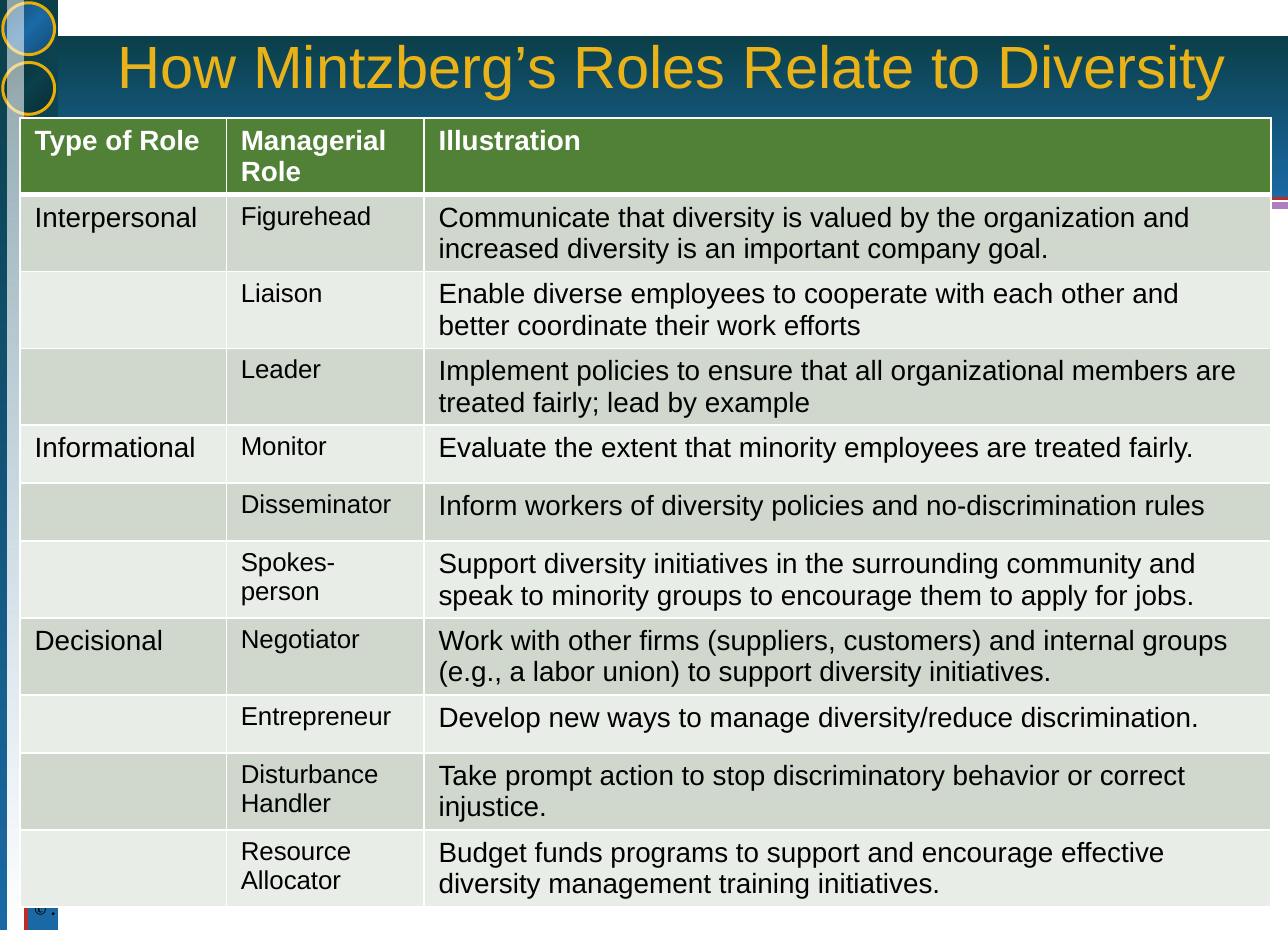
from dataclasses import dataclass

from lxml import etree
from pptx import Presentation
from pptx.dml.color import RGBColor
from pptx.enum.shapes import MSO_CONNECTOR, MSO_SHAPE
from pptx.enum.text import MSO_ANCHOR, MSO_AUTO_SIZE, PP_ALIGN
from pptx.oxml.ns import qn
from pptx.util import Cm, Pt

RECTANGLE, OVAL = MSO_SHAPE.RECTANGLE, MSO_SHAPE.OVAL
STRAIGHT = MSO_CONNECTOR.STRAIGHT
MIDDLE, BOTTOM = MSO_ANCHOR.MIDDLE, MSO_ANCHOR.BOTTOM
LEFT, CENTER, RIGHT = PP_ALIGN.LEFT, PP_ALIGN.CENTER, PP_ALIGN.RIGHT
NO_AUTOFIT, FIT_SHAPE = MSO_AUTO_SIZE.NONE, MSO_AUTO_SIZE.SHAPE_TO_FIT_TEXT
TITLE_ONLY = 5


@dataclass(frozen=True)
class Theme:
    font: str = "Arial"
    footer_font: str = "Cambria"
    title_size: float = 30
    table_size: float = 14
    role_size: float = 13
    footer_size: float = 9
    white: str = "FFFFFF"
    black: str = "000000"
    teal: str = "0B3F49"
    deep_teal: str = "082D34"
    blue: str = "1A69A4"
    deep_blue: str = "134B75"
    gold: str = "E8AD06"
    title_gold: str = "E8B218"
    red: str = "BB2C29"
    green: str = "538438"
    purple: str = "AF7EBE"
    header_fill: str = "518136"
    odd_fill: str = "D0D8CE"
    even_fill: str = "E9EDE8"


HEADERS = ["Type of Role", "Managerial\nRole", "Illustration"]
ROLES = {
    "Interpersonal": [
        ("Figurehead", "Communicate that diversity is valued by the organization and increased diversity is an important company goal."),
        ("Liaison", "Enable diverse employees to cooperate with each other and better coordinate their work efforts"),
        ("Leader", "Implement policies to ensure that all organizational members are treated fairly; lead by example"),
    ],
    "Informational": [
        ("Monitor", "Evaluate the extent that minority employees are treated fairly."),
        ("Disseminator", "Inform workers of diversity policies and no-discrimination rules"),
        ("Spokes-person", "Support diversity initiatives in the surrounding community and speak to minority groups to encourage them to apply for jobs."),
    ],
    "Decisional": [
        ("Negotiator", "Work with other firms (suppliers, customers) and internal groups (e.g., a labor union) to support diversity initiatives."),
        ("Entrepreneur", "Develop new ways to manage diversity/reduce discrimination."),
        ("Disturbance Handler", "Take prompt action to stop discriminatory behavior or correct injustice."),
        ("Resource Allocator", "Budget funds programs to support and encourage effective diversity management training initiatives."),
    ],
}


def add_color(parent, color, alpha=100):
    element = etree.SubElement(parent, qn("a:srgbClr"), val=color)
    if alpha < 100:
        etree.SubElement(element, qn("a:alpha"), val=str(alpha * 1000))


def write_text(frame, text, *, font, size, color, bold=False, italic=False, align=LEFT):
    frame.text = text
    for paragraph in frame.paragraphs:
        paragraph.alignment = align
        for run in paragraph.runs:
            run.font.name = font
            run.font.size = Pt(size)
            run.font.bold = bold
            run.font.italic = italic
            run.font.color.rgb = RGBColor.from_string(color)


class SlideBuilder:
    def __init__(self, slide, theme):
        self.slide = slide
        self.theme = theme

    def gradient_shape(self, kind, left, top, width, height, stops, angle, outline=None):
        shape = self.slide.shapes.add_shape(kind, Cm(left), Cm(top), Cm(width), Cm(height))
        shape.shadow.inherit = False
        shape.fill.gradient()
        shape.fill.gradient_angle = -angle % 360
        stop_list = shape.element.spPr.find(qn("a:gradFill")).find(qn("a:gsLst"))
        for stop in list(stop_list):
            stop_list.remove(stop)
        for position, color, alpha in stops:
            stop = etree.SubElement(stop_list, qn("a:gs"), pos=str(position * 1000))
            add_color(stop, color, alpha)
        if outline:
            shape.line.color.rgb = RGBColor.from_string(outline)
            shape.line.width = Pt(1.5)
        else:
            shape.line.fill.background()

    def line(self, start, end, color, width):
        connector = self.slide.shapes.add_connector(STRAIGHT, *map(Cm, start + end))
        connector.line.color.rgb = RGBColor.from_string(color)
        connector.line.width = Pt(width)
        etree.SubElement(connector.element.spPr, qn("a:effectLst"))

    def footer(self, text, left, top, width, height):
        frame = self.slide.shapes.add_textbox(Cm(left), Cm(top), Cm(width), Cm(height)).text_frame
        frame.margin_left = frame.margin_top = frame.margin_right = frame.margin_bottom = 0
        frame.word_wrap = False
        frame.auto_size = FIT_SHAPE
        frame.vertical_anchor = BOTTOM
        write_text(frame, text, font=self.theme.footer_font, size=self.theme.footer_size,
                   color=self.theme.black, bold=True, italic=True, align=RIGHT)

    def title(self, text, left, top, width, height):
        title = self.slide.shapes.title
        title.left, title.top, title.width, title.height = map(Cm, (left, top, width, height))
        frame = title.text_frame
        frame.auto_size = NO_AUTOFIT
        frame.vertical_anchor = MIDDLE
        write_text(frame, text, font=self.theme.font, size=self.theme.title_size,
                   color=self.theme.title_gold, align=CENTER)
        properties = frame.paragraphs[0].runs[0].font
        fill = title.element.find(".//" + qn("a:rPr")).find(qn("a:solidFill"))
        effects = etree.Element(qn("a:effectLst"))
        shadow = etree.SubElement(effects, qn("a:outerShdw"), dist="35921", dir="2700000")
        add_color(shadow, self.theme.black)
        fill.addnext(effects)
        title.element.getparent().append(title.element)

    def cell_borders(self, cell, top=1, bottom=1):
        properties = cell._tc.get_or_add_tcPr()
        for index, (side, width) in enumerate(zip("LRTB", (1, 1, top, bottom))):
            border = etree.Element(qn(f"a:ln{side}"), w=str(Pt(width)))
            add_color(etree.SubElement(border, qn("a:solidFill")), self.theme.white)
            properties.insert(index, border)

    def table(self, rows, left, top, widths, row_height):
        theme = self.theme
        table = self.slide.shapes.add_table(
            len(rows), len(widths), Cm(left), Cm(top), Cm(sum(widths)), Cm(row_height * len(rows))
        ).table
        for column, width in zip(table.columns, widths):
            column.width = Cm(width)
        for row_index, row in enumerate(rows):
            header = row_index == 0
            fill = theme.header_fill if header else (theme.even_fill, theme.odd_fill)[row_index % 2]
            for column_index, text in enumerate(row):
                cell = table.cell(row_index, column_index)
                cell.fill.solid()
                cell.fill.fore_color.rgb = RGBColor.from_string(fill)
                self.cell_borders(cell, top=3 if row_index == 1 else 1, bottom=3 if header else 1)
                role = column_index == 1 and not header
                write_text(cell.text_frame, text, font=theme.font, bold=header,
                           size=theme.role_size if role else theme.table_size,
                           color=theme.white if header else theme.black)


def main():
    theme = Theme()
    presentation = Presentation()
    presentation.slide_width, presentation.slide_height = Cm(22.86), Cm(16.51)
    slide = presentation.slides.add_slide(presentation.slide_layouts[TITLE_ONLY])
    builder = SlideBuilder(slide, theme)

    backdrop = [(0, theme.teal, 100), (100, theme.blue, 100)]
    builder.gradient_shape(RECTANGLE, 1, 3.58, 21.86, 0.13,
                           [(0, theme.green, 100), (100, theme.purple, 100)], 0)
    builder.gradient_shape(RECTANGLE, 0, 0.64, 22.86, 2.87, backdrop, 90)
    builder.line((1, 3.53), (22.86, 3.53), theme.red, 1.5)
    builder.gradient_shape(RECTANGLE, 0, 0, 1.04, 16.51, backdrop, 90)
    builder.line((0.46, 2.01), (0.46, 16.51), theme.red, 2.25)
    for top, edge, center in ((1.11, theme.deep_teal, theme.teal), (0.05, theme.deep_blue, theme.blue)):
        builder.gradient_shape(OVAL, 0.05, top, 0.92, 0.92,
                               [(0, edge, 100), (50, center, 100), (100, edge, 100)], 45, theme.gold)
    builder.gradient_shape(RECTANGLE, 0.13, 0, 0.29, 16.51,
                           [(0, theme.white, 52), (100, theme.white, 100)], 90)

    builder.footer("© .", 0.58, 15.93, 0.41, 0.38)
    builder.title("How Mintzberg’s Roles Relate to Diversity", 1, 0, 21.86, 2.31)
    rows = [HEADERS] + [
        (role_type if index == 0 else "", role, illustration)
        for role_type, entries in ROLES.items()
        for index, (role, illustration) in enumerate(entries)
    ]
    builder.table(rows, 0.36, 2.09, (3.66, 3.51, 15.03), 1.03)
    presentation.save("out.pptx")


if __name__ == "__main__":
    main()
